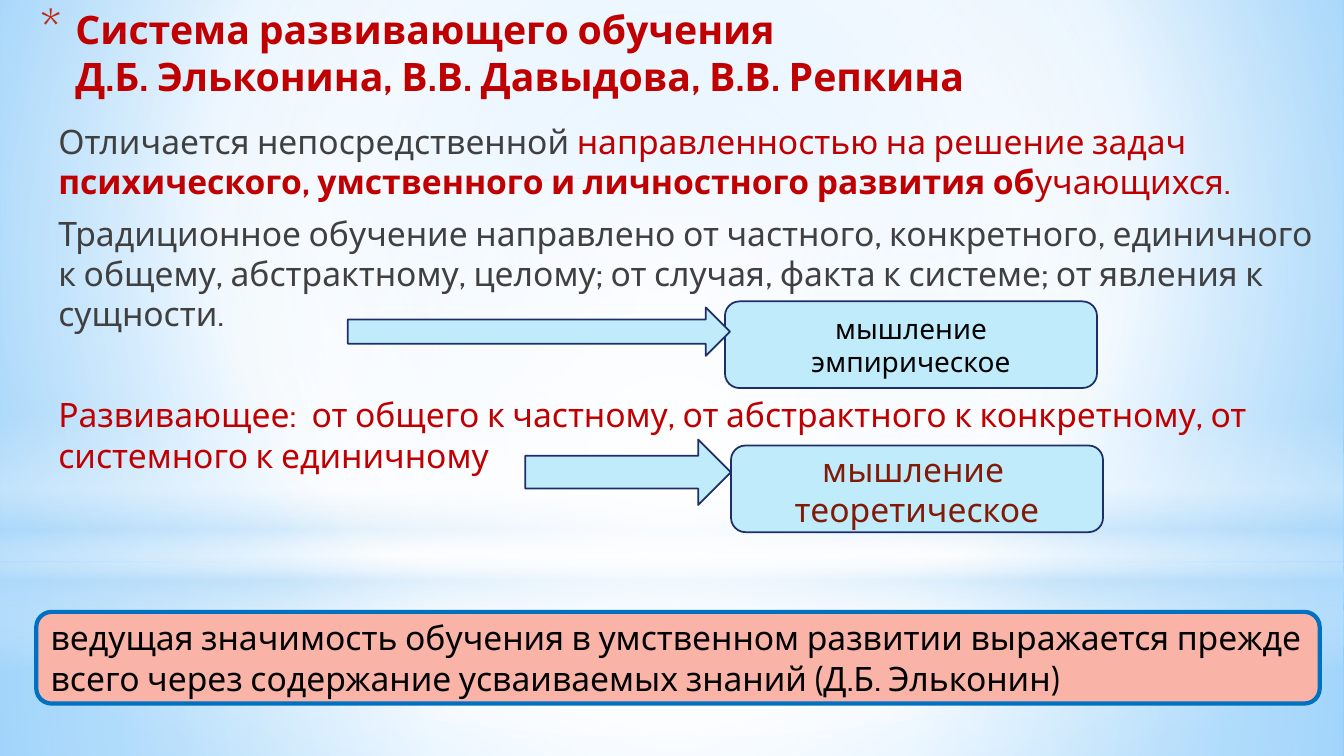
from dataclasses import dataclass

from lxml.etree import SubElement
from pptx import Presentation
from pptx.dml.color import RGBColor
from pptx.enum.shapes import MSO_SHAPE as SHAPE
from pptx.enum.text import MSO_ANCHOR as ANCHOR, PP_ALIGN as ALIGN
from pptx.oxml.ns import qn
from pptx.util import Inches, Pt


@dataclass(frozen=True)
class Theme:
    font: str = "Cabin"
    title: int = 28
    body: int = 24
    small: int = 20
    red: str = "C00000"
    gray: str = "404040"
    black: str = "000000"
    brown: str = "821A08"
    bullet: str = "C3260C"
    sky: str = "BFEBFA"
    navy: str = "1F2E69"
    pink: str = "F9B3A7"
    blue: str = "0070C0"
    white: str = "FFFFFF"
    haze: str = "B4DCFA"
    bg_center: str = "9ED5FF"
    bg_edge: str = "5BB9FF"


T = Theme()
CENTER = (50, 50, 50, 50)


def set_gradient(fill, parent, stops, focus=None):
    """Stops are (position, colour, opacity) in percent; without a focus the gradient runs downward."""
    fill.gradient()
    grad = parent.find(qn("a:gradFill"))
    for child in list(grad):
        grad.remove(child)
    gs_list = SubElement(grad, qn("a:gsLst"))
    for pos, color, alpha in stops:
        gs = SubElement(gs_list, qn("a:gs"), pos=str(pos * 1000))
        clr = SubElement(gs, qn("a:srgbClr"), val=color)
        if alpha < 100:
            SubElement(clr, qn("a:alpha"), val=str(alpha * 1000))
    if focus:
        radial = SubElement(grad, qn("a:path"), path="circle")
        SubElement(radial, qn("a:fillToRect"),
                   **{side: str(v * 1000) for side, v in zip("ltrb", focus)})
    else:
        SubElement(grad, qn("a:lin"), ang="5400000", scaled="0")


def add_run(p, text, size, color, bold=False):
    r = p.add_run()
    r.text = text
    r.font.name = T.font
    r.font.size = Pt(size)
    r.font.bold = bold
    r.font.color.rgb = RGBColor.from_string(color)


def add_shape(slide, kind, box):
    sp = slide.shapes.add_shape(kind, *map(Inches, box))
    sp.shadow.inherit = False
    return sp


def add_outlined(slide, kind, box, fill=T.sky, line=T.navy, width=1.25):
    sp = add_shape(slide, kind, box)
    sp.fill.solid()
    sp.fill.fore_color.rgb = RGBColor.from_string(fill)
    sp.line.color.rgb = RGBColor.from_string(line)
    sp.line.width = Pt(width)
    return sp


def add_label(sp, text, size, color, align=ALIGN.CENTER):
    tf = sp.text_frame
    tf.word_wrap = True
    tf.vertical_anchor = ANCHOR.MIDDLE
    p = tf.paragraphs[0]
    p.alignment = align
    add_run(p, text, size, color)


def add_text_frame(slide, box):
    tf = slide.shapes.add_textbox(*map(Inches, box)).text_frame
    tf.word_wrap = True
    return tf


def add_backdrop(slide, width):
    fill = slide.background.fill
    fill.solid()
    bg = next(slide.element.iter(qn("p:bgPr")))
    set_gradient(fill, bg, [(0, T.bg_center, 100), (60, T.white, 100),
                            (100, T.bg_edge, 100)], (20, 10, 20, 60))
    layers = [
        (SHAPE.RECTANGLE, 5.58, 1.92, CENTER,
         [(0, T.white, 91), (37, T.white, 76), (100, T.haze, 79)]),
        (SHAPE.RECTANGLE, 0, 5.58, CENTER,
         [(0, T.white, 89), (48, T.white, 62), (100, T.haze, 79)]),
        (SHAPE.RECTANGLE, 4.12, 2.5, None,
         [(0, T.white, 0), (29, T.white, 30), (45, T.haze, 40),
          (55, T.white, 26), (65, T.haze, 60), (100, T.white, 0)]),
        (SHAPE.OVAL, 1.75, 5.58, CENTER, [(0, T.white, 100), (56, T.white, 0)]),
    ]
    for kind, top, height, focus, stops in layers:
        sp = add_shape(slide, kind, (0, top, width, height))
        sp.line.fill.background()
        set_gradient(sp.fill, sp.element.spPr, stops, focus)


def add_title(slide, box):
    p = add_text_frame(slide, box).paragraphs[0]
    pPr = p._p.get_or_add_pPr()
    indent = Inches(0.35)
    pPr.set("marL", str(indent))
    pPr.set("indent", str(-indent))
    SubElement(SubElement(pPr, qn("a:buClr")), qn("a:srgbClr"), val=T.bullet)
    SubElement(pPr, qn("a:buSzPct"), val="128000")
    SubElement(pPr, qn("a:buFont"), typeface=T.font)
    SubElement(pPr, qn("a:buChar"), char="*")
    add_run(p, "Система развивающего обучения ", T.title, T.red, True)
    p.add_line_break()
    add_run(p, "Д.Б. Эльконина, В.В. Давыдова, В.В. Репкина", T.title, T.red, True)


def add_body(slide, box):
    paragraphs = [
        (0, [("Отличается непосредственной", T.gray, False),
             (" направленностью на решение задач ", T.red, False),
             ("психического, умственного и личностного развития об", T.red, True),
             ("учающихся.", T.red, False)]),
        (4.8, [("Традиционное обучение направлено от частного, конкретного, "
                "единичного к общему, абстрактному, целому; от случая, факта "
                "к системе; от явления к сущности.", T.gray, False)]),
        (40.5, [("Развивающее:  от общего к частному, от абстрактного к "
                 "конкретному, от системного к единичному", T.red, False)]),
    ]
    tf = add_text_frame(slide, box)
    for i, (before, runs) in enumerate(paragraphs):
        p = tf.add_paragraph() if i else tf.paragraphs[0]
        p.space_before = Pt(before)
        p.space_after = Pt(3)
        for text, color, bold in runs:
            add_run(p, text, T.body, color, bold)


def add_thinking(slide, box, arrow_box, text, size, color):
    """Place a kind of thinking and the arrow that leads to it."""
    add_label(add_outlined(slide, SHAPE.ROUNDED_RECTANGLE, box), text, size, color)
    add_outlined(slide, SHAPE.RIGHT_ARROW, arrow_box)


def add_conclusion(slide, box):
    sp = add_outlined(slide, SHAPE.ROUNDED_RECTANGLE, box, T.pink, T.blue, 3)
    add_label(sp, "ведущая значимость обучения в умственном развитии выражается "
                  "прежде всего через содержание усваиваемых знаний (Д.Б. Эльконин)",
              T.body, T.black, ALIGN.LEFT)


def main():
    prs = Presentation()
    prs.slide_width, prs.slide_height = Inches(13.33), Inches(7.5)
    slide = prs.slides.add_slide(prs.slide_layouts[6])
    add_backdrop(slide, 13.33)
    add_title(slide, (0.3, 0, 11.74, 1.15))
    add_body(slide, (0.48, 1.15, 12.85, 5.03))
    add_conclusion(slide, (0.36, 6.07, 12.73, 0.91))
    add_thinking(slide, (7.25, 4.42, 3.69, 0.86), (5.21, 4.36, 2.04, 0.65),
                 "мышление  теоретическое", T.body, T.brown)
    add_thinking(slide, (7.19, 2.99, 3.69, 0.86), (3.45, 3.05, 3.79, 0.48),
                 "мышление эмпирическое", T.small, T.black)
    prs.save("out.pptx")


if __name__ == "__main__":
    main()
